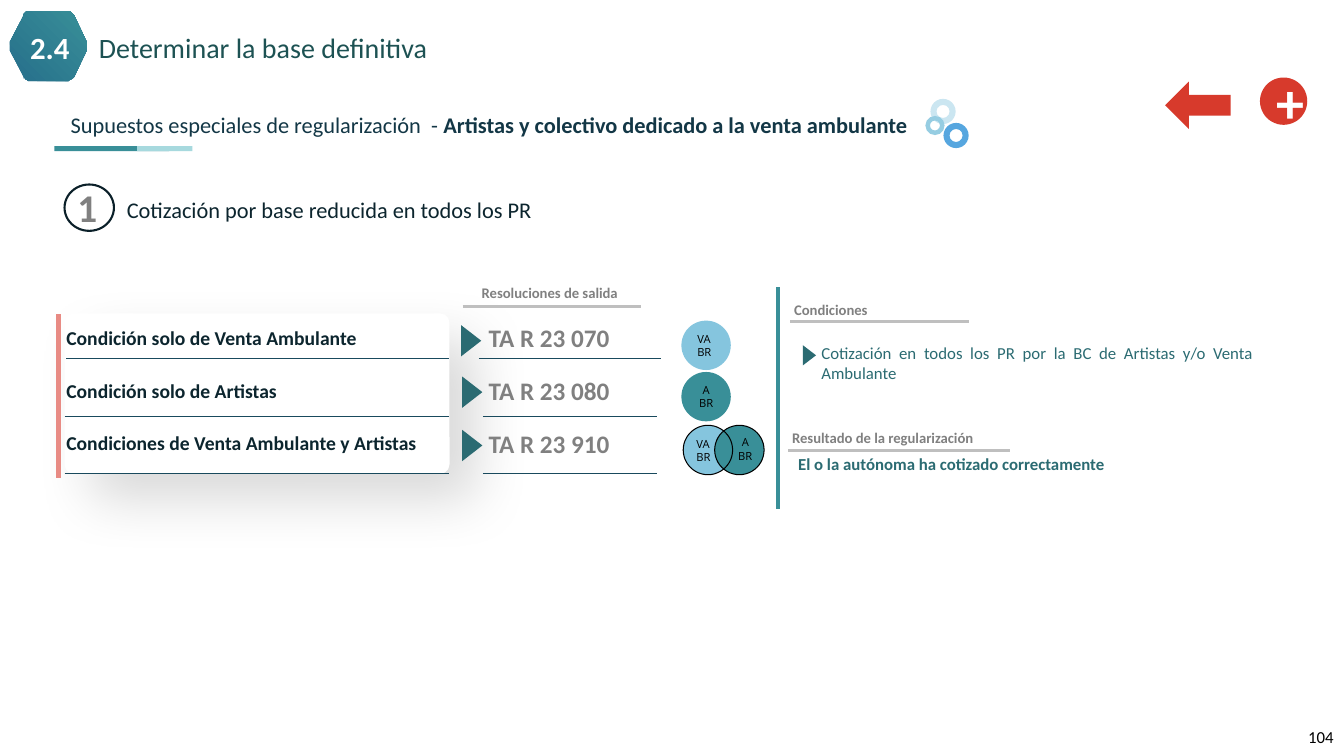
"""Builds the slide on reduced-base contributions for artists and street vendors."""
from lxml import etree
from pptx import Presentation
from pptx.dml.color import RGBColor
from pptx.enum import shapes as kinds, text as styles
from pptx.oxml import parse_xml
from pptx.oxml.ns import nsdecls, qn
from pptx.util import Pt

rgb = RGBColor.from_string
KIND, ALIGN, ANCHOR = kinds.MSO_SHAPE, styles.PP_ALIGN, styles.MSO_ANCHOR
INK, TEAL, DEEP, GREY, RED, SKY = "0C252E", "398F98", "2B6B72", "808080", "D73A2C", "46A7CD"

deck = Presentation()
deck.slide_width, deck.slide_height = Pt(960), Pt(540)
slide = deck.slides.add_slide(deck.slide_layouts[5])
parts = slide.shapes


def figure(kind, left, top, width, height, fill=None, edge=None, weight=1):
    item = parts.add_shape(kind, Pt(left), Pt(top), Pt(width), Pt(height))
    item.shadow.inherit = False
    if fill:
        item.fill.solid()
        item.fill.fore_color.rgb = rgb(fill)
    else:
        item.fill.background()
    if edge:
        item.line.color.rgb = rgb(edge)
        item.line.width = Pt(weight)
    else:
        item.line.fill.background()
    return item


def write(words, size, color, box, bold=False, align=ALIGN.LEFT, spacing=None,
          anchor=ANCHOR.TOP, font="Calibri", host=None):
    host = host or parts.add_textbox(*map(Pt, box))
    frame = host.text_frame
    frame.text = words
    frame.word_wrap = True
    frame.auto_size = styles.MSO_AUTO_SIZE.NONE
    frame.vertical_anchor = anchor
    for paragraph in frame.paragraphs:
        paragraph.alignment = align
        paragraph.line_spacing = spacing
        for run in paragraph.runs:
            run.font.name, run.font.size, run.font.bold = font, Pt(size), bold
            run.font.color.rgb = rgb(color)
    return frame


card = figure(KIND.ROUNDED_RECTANGLE, 46.1, 223.9, 275, 114.5, "FFFFFF")
card.adjustments[0] = 0.058
card_effects = card._element.spPr.find(qn("a:effectLst"))
card_effects.append(parse_xml(
    f'<a:outerShdw {nsdecls("a")} blurRad="508000" dist="330200" dir="2700000" algn="tl" '
    'rotWithShape="0"><a:srgbClr val="000000"><a:alpha val="15000"/></a:srgbClr></a:outerShdw>'))

title = parts.title
title.left, title.top, title.width, title.height = Pt(63.4), Pt(21.6), Pt(833.8), Pt(28)
write("Determinar la base definitiva", 20, "1D5253", None, spacing=0.85, host=title)

corners = [(18, 7.9), (51.1, 7.9), (63.2, 32.8), (51.1, 57.6), (18, 57.6), (5.9, 32.8)]
outline = []
for index, (x, y) in enumerate(corners):
    ends = []
    for near_x, near_y in (corners[index - 1], corners[(index + 1) % 6]):
        reach = 3.3 / ((near_x - x) ** 2 + (near_y - y) ** 2) ** 0.5
        ends.append((x + (near_x - x) * reach, y + (near_y - y) * reach))
    for step in range(7):
        t = step / 6
        outline.append(tuple((1 - t) ** 2 * a + 2 * t * (1 - t) * b + t ** 2 * c
                             for a, b, c in zip(ends[0], (x, y), ends[1])))
builder = parts.build_freeform(*outline[0], scale=Pt(1))
builder.add_line_segments(outline[1:])
hexagon = builder.convert_to_shape()
hexagon.shadow.inherit = False
hexagon.line.fill.background()
hexagon.fill.gradient()
hexagon.fill.gradient_angle = 45
for stop, color in zip(hexagon.fill.gradient_stops, ("266F8B", TEAL)):
    stop.color.rgb = rgb(color)
section = write("2.4", 22, "FFFFFF", (12.2, 25.2, 46.8, 21.6), True, ALIGN.CENTER, 0.8, ANCHOR.MIDDLE)
section.margin_top = section.margin_bottom = 0

subtitle = figure(KIND.ROUNDED_RECTANGLE, 6.5, 80.6, 953, 17.3)
heading = write("Supuestos especiales de regularización  - ", 16, "133746", None,
                anchor=ANCHOR.MIDDLE, host=subtitle)
heading.margin_left = Pt(43.2)
collective = heading.paragraphs[0].add_run()
collective.text = "Artistas y colectivo dedicado a la venta ambulante"
collective.font.name, collective.font.size, collective.font.bold = "Calibri", Pt(16), True
collective.font.color.rgb = rgb("133746")
figure(KIND.RECTANGLE, 38.9, 104.4, 82, 3.6, TEAL)
figure(KIND.RECTANGLE, 97.9, 104.4, 39.6, 3.6, "A7D9DE")

for left, top, size, color in ((664.6, 70.6, 18, "CBE6F1"), (661, 82.8, 13.7, "96CDE2"),
                               (673.9, 87.8, 18, "56A6DF")):
    figure(KIND.DONUT, left, top, size, size, color).adjustments[0] = 0.24

back = figure(KIND.LEFT_ARROW, 832.3, 58.3, 46.8, 33.8, RED)
back.adjustments[0] = 0.441
plus = figure(KIND.OVAL, 900, 55.4, 33.8, 33.8, RED)
write("+", 40, "FFFFFF", None, True, ALIGN.CENTER, anchor=ANCHOR.MIDDLE, host=plus)

figure(KIND.OVAL, 46.1, 131.8, 35.3, 33.1, edge="0B2029", weight=1.5)
write("1", 28, GREY, (48.2, 131, 18, 20.2), True, spacing=0.9)
write("Cotización por base reducida en todos los PR", 16, INK, (83.5, 136.8, 630, 26.6))

lines = [(41.8, 224.6, 41.8, 341.3, "E88B84", 3), (555.8, 205.2, 555.8, 363.6, TEAL, 3)]

conditions = [
    ("Condición solo de Venta Ambulante", "TA R 23 070", 47.5, 342, 472.3, 325.4, 236.2),
    ("Condición solo de Artistas", "TA R 23 080", 46.1, 344.9, 469.4, 326.2, 272.9),
    ("Condiciones de Venta Ambulante y Artistas", "TA R 23 910", 46.1, 344.9, 469.4, 326.2, 311),
]
arrows = [(571, 249.1, 14.4, 9.4)]
for row, (condition, resolution, start, code_start, code_end, tip, tip_top) in enumerate(conditions):
    top, rule = 229 + 37.8 * row, 256.3 + 41 * row
    write(condition, 14, INK, (40.3, top, 294, 24.5), True, ALIGN.JUSTIFY)
    write(resolution, 18, GREY, (342, top, 193, 26.6), True, spacing=0.9)
    lines += [(start, rule, 320.4, rule, "194A5D", 0.5),
              (code_start, rule, code_end, rule, "194A5D", 0.5)]
    arrows.append((tip, tip_top, 22.3, 14.4))

for arrow in arrows:
    figure(KIND.ISOSCELES_TRIANGLE, *arrow, DEEP).rotation = 90

for left, top, words, color, box, align in (
        (486.7, 229, "VA BR", SKY, (491, 239, 31.7, 15.8), ALIGN.LEFT),
        (486.7, 265.7, "A\nBR", TEAL, (491.8, 273.6, 25.2, 19.4), ALIGN.CENTER),
        (488, 303.8, "VA BR", SKY, (490.3, 313.9, 31.7, 15.8), ALIGN.LEFT),
        (510.5, 303.8, "A\nBR", TEAL, (519.8, 311, 25.2, 19.4), ALIGN.CENTER)):
    disc = figure(KIND.OVAL, left, top, 35.3, 35.3, color)
    if color == SKY:
        tint = disc._element.spPr.find(qn("a:solidFill")).find(qn("a:srgbClr"))
        etree.SubElement(tint, qn("a:alpha")).set("val", "66000")
    write(words, 8, "000000", box, align=align, anchor=ANCHOR.MIDDLE, font="Open Sans")
for left in (488, 510.5):
    figure(KIND.OVAL, left, 303.8, 35.3, 35.3, edge="000000", weight=0.75)

for words, left, top, width, start, end, rule in (
        ("Resoluciones de salida", 337, 199.4, 136.8, 330.5, 457.9, 218.9),
        ("Condiciones", 560.2, 211, 77, 564.5, 691.9, 229.7),
        ("Resultado de la regularización", 558.7, 302.4, 176.4, 563, 721.4, 321.8)):
    write(words, 10.5, GREY, (left, top, width, 20.2), True)
    lines.append((start, rule, end, rule, "BFBFBF", 2.25))

write("Cotización en todos los PR por la BC de Artistas y/o Venta Ambulante", 12, DEEP,
      (579.6, 241.2, 322.6, 36), align=ALIGN.JUSTIFY)
write("El o la autónoma ha cotizado correctamente", 12, DEEP, (563, 320.4, 359.3, 21.6),
      True, ALIGN.JUSTIFY)
write("104", 12, "000000", (743.8, 512.6, 216, 28.8 - 1.4), align=ALIGN.RIGHT, anchor=ANCHOR.MIDDLE)

for x1, y1, x2, y2, color, weight in lines:
    rule = parts.add_connector(kinds.MSO_CONNECTOR.STRAIGHT, Pt(x1), Pt(y1), Pt(x2), Pt(y2))
    rule.line.color.rgb = rgb(color)
    rule.line.width = Pt(weight)
    etree.SubElement(rule._element.spPr, qn("a:effectLst"))

deck.save("out.pptx")
